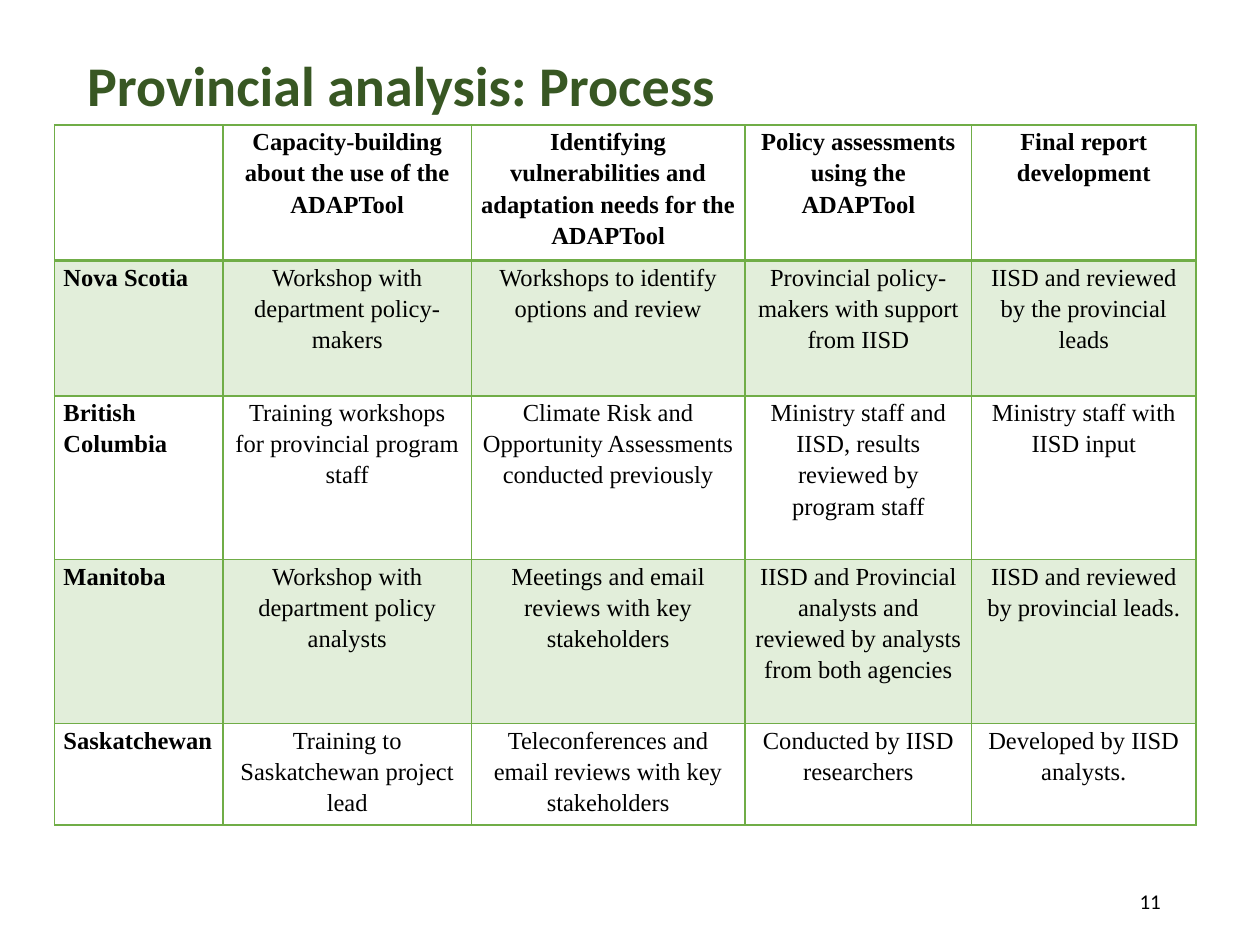
from lxml.etree import SubElement
from pptx import Presentation
from pptx.dml.color import RGBColor
from pptx.enum.text import MSO_ANCHOR as Anchor, PP_ALIGN as Align
from pptx.oxml.ns import qn
from pptx.util import Cm, Pt

GREEN, DARK_GREEN, BLACK = "70AD47", "385723", "000000"
SERIF, SANS = "Times New Roman", "Calibri"
COL_WIDTHS = [3.4, 5, 5.52, 4.57, 4.52]
ROW_HEIGHTS = [2.74, 2.72, 3.3, 3.3, 2.05]
ROWS = [
    ["", "Capacity-building about the use of the ADAPTool",
     "Identifying vulnerabilities and adaptation needs for the ADAPTool",
     "Policy assessments using the ADAPTool", "Final report development"],
    ["Nova Scotia", "Workshop with department policy-makers",
     "Workshops to identify options and review",
     "Provincial policy-makers with support from IISD",
     "IISD and reviewed by the provincial leads"],
    ["British Columbia", "Training workshops for provincial program staff",
     "Climate Risk and Opportunity Assessments conducted previously",
     "Ministry staff and IISD, results reviewed by program staff",
     "Ministry staff with IISD input"],
    ["Manitoba", "Workshop with department policy analysts",
     "Meetings and email reviews with key stakeholders",
     "IISD and Provincial analysts and reviewed by analysts from both agencies",
     "IISD and reviewed by provincial leads."],
    ["Saskatchewan", "Training to Saskatchewan project lead",
     "Teleconferences and email reviews with key stakeholders",
     "Conducted by IISD researchers", "Developed by IISD analysts."],
]


def rgb(color):
    return RGBColor.from_string(color)


def write(tf, text, size=14, font=SANS, color=BLACK, bold=False,
          align=Align.LEFT, spacing=1.0):
    tf.word_wrap = True
    p = tf.paragraphs[0]
    p.alignment = align
    p.line_spacing = spacing
    p.font.size = Pt(size)
    if text:
        r = p.add_run()
        r.text = text
        r.font.name, r.font.size, r.font.bold = font, Pt(size), bold
        r.font.color.rgb = rgb(color)


def set_border(cell, side, width):
    tc_pr = cell._tc.get_or_add_tcPr()
    ln = SubElement(tc_pr, qn(f"a:ln{side}"), w=str(Pt(width)))
    fill = SubElement(ln, qn("a:solidFill"))
    SubElement(fill, qn("a:srgbClr"), val=GREEN)


def tint(cell, color, percent):
    cell.fill.solid()
    cell.fill.fore_color.rgb = rgb(color)
    clr = cell._tc.tcPr.find(qn("a:solidFill")).find(qn("a:srgbClr"))
    SubElement(clr, qn("a:alpha"), val=str(percent * 1000))


def add_title(slide, x, y, w, h):
    sp = slide.shapes.title
    sp.left, sp.top, sp.width, sp.height = Cm(x), Cm(y), Cm(w), Cm(h)
    tf = sp.text_frame
    tf.vertical_anchor = Anchor.MIDDLE
    write(tf, "Provincial analysis: Process", size=32, color=DARK_GREEN, bold=True)


def add_process_table(slide, x, y):
    table = slide.shapes.add_table(
        len(ROWS), len(COL_WIDTHS), Cm(x), Cm(y),
        Cm(sum(COL_WIDTHS)), Cm(sum(ROW_HEIGHTS))).table
    table.first_row = table.horz_banding = False
    for column, width in zip(table.columns, COL_WIDTHS):
        column.width = Cm(width)
    for i, (row, height) in enumerate(zip(table.rows, ROW_HEIGHTS)):
        row.height = Cm(height)
        for j, cell in enumerate(row.cells):
            cell.margin_left = cell.margin_right = Cm(0.18)
            cell.margin_top = cell.margin_bottom = 0
            for side in "LRTB":
                under_header = (i, side) in ((0, "B"), (1, "T"))
                set_border(cell, side, 2 if under_header else 1)
            if i % 2:
                tint(cell, GREEN, 20)
            else:
                cell.fill.background()
            write(cell.text_frame, ROWS[i][j], font=SERIF, bold=i == 0 or j == 0,
                  align=Align.CENTER if j else Align.LEFT, spacing=1.15)


def add_slide_number(slide, x, y, w, h):
    tf = slide.shapes.add_textbox(Cm(x), Cm(y), Cm(w), Cm(h)).text_frame
    tf.vertical_anchor = Anchor.MIDDLE
    write(tf, "11", size=12, align=Align.RIGHT)


def main():
    prs = Presentation()
    prs.slide_width, prs.slide_height = Cm(25.4), Cm(19.05)
    slide = prs.slides.add_slide(prs.slide_layouts[5])
    add_title(slide, 1.5, 0.74, 21.6, 1.9)
    add_process_table(slide, 1.1, 2.52)
    add_slide_number(slide, 22.5, 17.65, 1.15, 1.02)
    prs.save("out.pptx")


if __name__ == "__main__":
    main()
